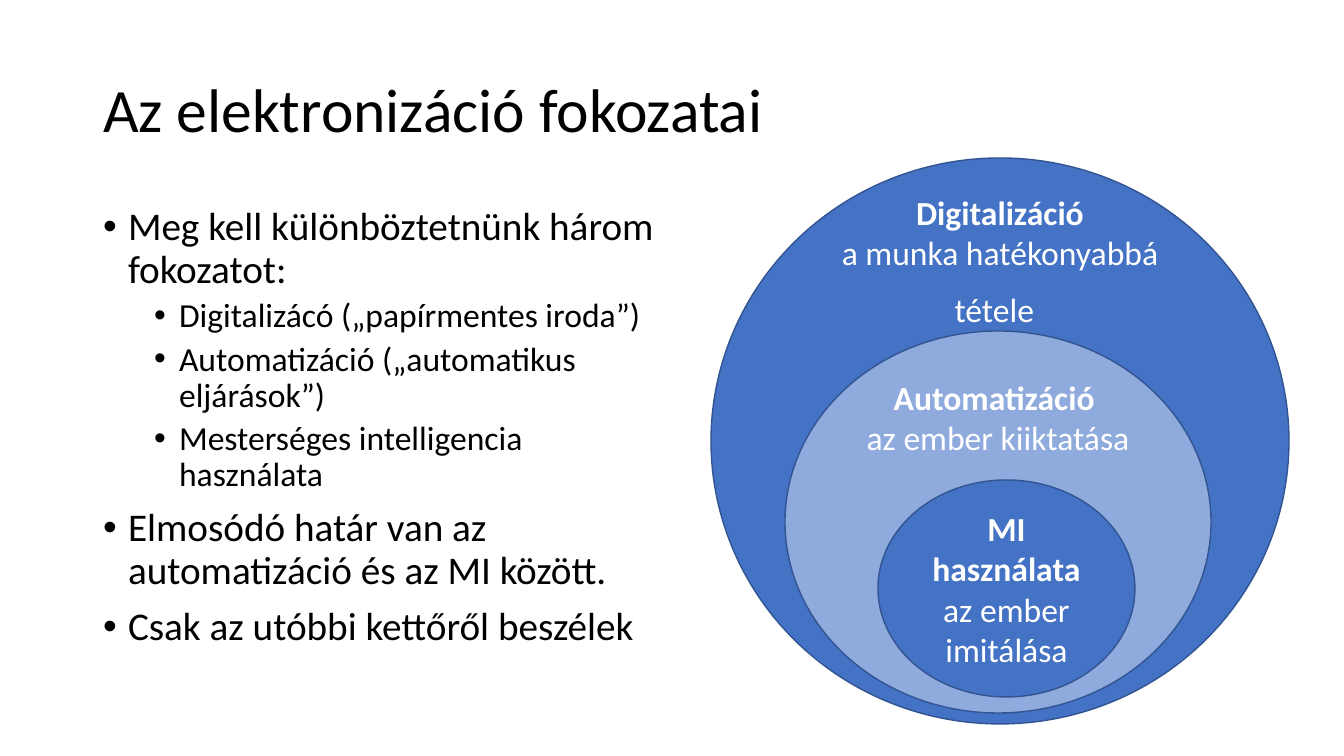
from lxml.etree import SubElement
from pptx import Presentation
from pptx.dml.color import RGBColor
from pptx.enum.shapes import MSO_SHAPE
from pptx.enum.text import MSO_ANCHOR, MSO_AUTO_SIZE, PP_ALIGN
from pptx.oxml.ns import qn
from pptx.util import Emu, Pt

SLIDE_WIDTH, SLIDE_HEIGHT = 1344, 756
EMU_PER_PX = 12192000 / SLIDE_WIDTH

BLUE, LIGHT_BLUE, OUTLINE = "4472C4", "8FAADC", "325491"
BLACK, WHITE = "000000", "FFFFFF"

# Level, text
POINTS = [
    (0, "Meg kell különböztetnünk három fokozatot:"),
    (1, "Digitalizácó („papírmentes iroda”)"),
    (1, "Automatizáció („automatikus eljárások”)"),
    (1, "Mesterséges intelligencia használata"),
    (0, "Elmosódó határ van az automatizáció és az MI között."),
    (0, "Csak az utóbbi kettőről beszélek"),
]

# Box, fill, bottom inset, paragraphs made of (text, size, bold)
STAGES = [
    ((711, 158, 578, 566), BLUE, 362,
     [[("Digitalizáció", 24, True)],
      [("a munka hatékonyabbá tétele", 24, False), (" ", 36, False)]]),
    ((785, 331, 426, 382), LIGHT_BLUE, 215,
     [[("Automatizáció ", 24, True)],
      [("az ember kiiktatása", 24, False)]]),
    ((878, 480, 257, 217), BLUE, 5,
     [[("MI használata ", 24, True), ("az ember imitálása", 24, False)]]),
]


def px(length):
    return Emu(round(length * EMU_PER_PX))


def color(hex_string):
    return RGBColor.from_string(hex_string)


class SlideBuilder:
    """Holds the text style and the slide being filled."""

    font_name = "Calibri"
    level_sizes = (28, 24)
    level_spacing = (10, 5)
    level_indents = (25, 76)
    hanging = 25

    def __init__(self, slide):
        self.slide = slide

    def style(self, run, size, hex_string, bold=False):
        run.font.name = self.font_name
        run.font.size = Pt(size)
        run.font.bold = bold
        run.font.color.rgb = color(hex_string)

    def place(self, shape, box):
        shape.left, shape.top, shape.width, shape.height = map(px, box)

    def title(self, text, box):
        heading = self.slide.shapes.title
        self.place(heading, box)
        frame = heading.text_frame
        frame.text = text
        frame.auto_size = MSO_AUTO_SIZE.NONE
        frame.vertical_anchor = MSO_ANCHOR.MIDDLE
        line = frame.paragraphs[0]
        line.alignment = PP_ALIGN.LEFT
        line.line_spacing = 0.9
        self.style(line.runs[0], 44, BLACK)

    def bullet(self, paragraph, level):
        properties = paragraph._p.get_or_add_pPr()
        properties.set("marL", str(px(self.level_indents[level])))
        properties.set("indent", str(-px(self.hanging)))
        SubElement(properties, qn("a:buFont")).set("typeface", "Arial")
        SubElement(properties, qn("a:buChar")).set("char", "•")

    def points(self, items, box):
        body = self.slide.placeholders[1]
        self.place(body, box)
        frame = body.text_frame
        frame.text = "\n".join(text for _, text in items)
        frame.auto_size = MSO_AUTO_SIZE.NONE
        frame.vertical_anchor = MSO_ANCHOR.TOP
        for paragraph, (level, _) in zip(frame.paragraphs, items):
            paragraph.level = level
            paragraph.alignment = PP_ALIGN.LEFT
            paragraph.line_spacing = 0.9
            paragraph.space_before = Pt(self.level_spacing[level])
            self.bullet(paragraph, level)
            self.style(paragraph.runs[0], self.level_sizes[level], BLACK)

    def stage(self, box, fill, bottom_inset, paragraphs):
        """Ellipse whose bottom inset lifts its centred text above the next stage."""
        ellipse = self.slide.shapes.add_shape(MSO_SHAPE.OVAL, *map(px, box))
        ellipse.shadow.inherit = False
        ellipse.fill.solid()
        ellipse.fill.fore_color.rgb = color(fill)
        ellipse.line.color.rgb = color(OUTLINE)
        ellipse.line.width = Pt(1)
        frame = ellipse.text_frame
        frame.word_wrap = True
        frame.vertical_anchor = MSO_ANCHOR.MIDDLE
        frame.margin_top, frame.margin_bottom = px(5), px(bottom_inset)
        for index, parts in enumerate(paragraphs):
            paragraph = frame.add_paragraph() if index else frame.paragraphs[0]
            paragraph.alignment = PP_ALIGN.CENTER
            for text, size, bold in parts:
                run = paragraph.add_run()
                run.text = text
                self.style(run, size, WHITE, bold)


def main():
    presentation = Presentation()
    presentation.slide_width = px(SLIDE_WIDTH)
    presentation.slide_height = px(SLIDE_HEIGHT)
    layout = presentation.slide_layouts[1]
    builder = SlideBuilder(presentation.slides.add_slide(layout))
    builder.title("Az elektronizáció fokozatai", (93, 40, 1159, 146))
    builder.points(POINTS, (93, 202, 580, 480))
    for stage in STAGES:
        builder.stage(*stage)
    presentation.save("out.pptx")


if __name__ == "__main__":
    main()
